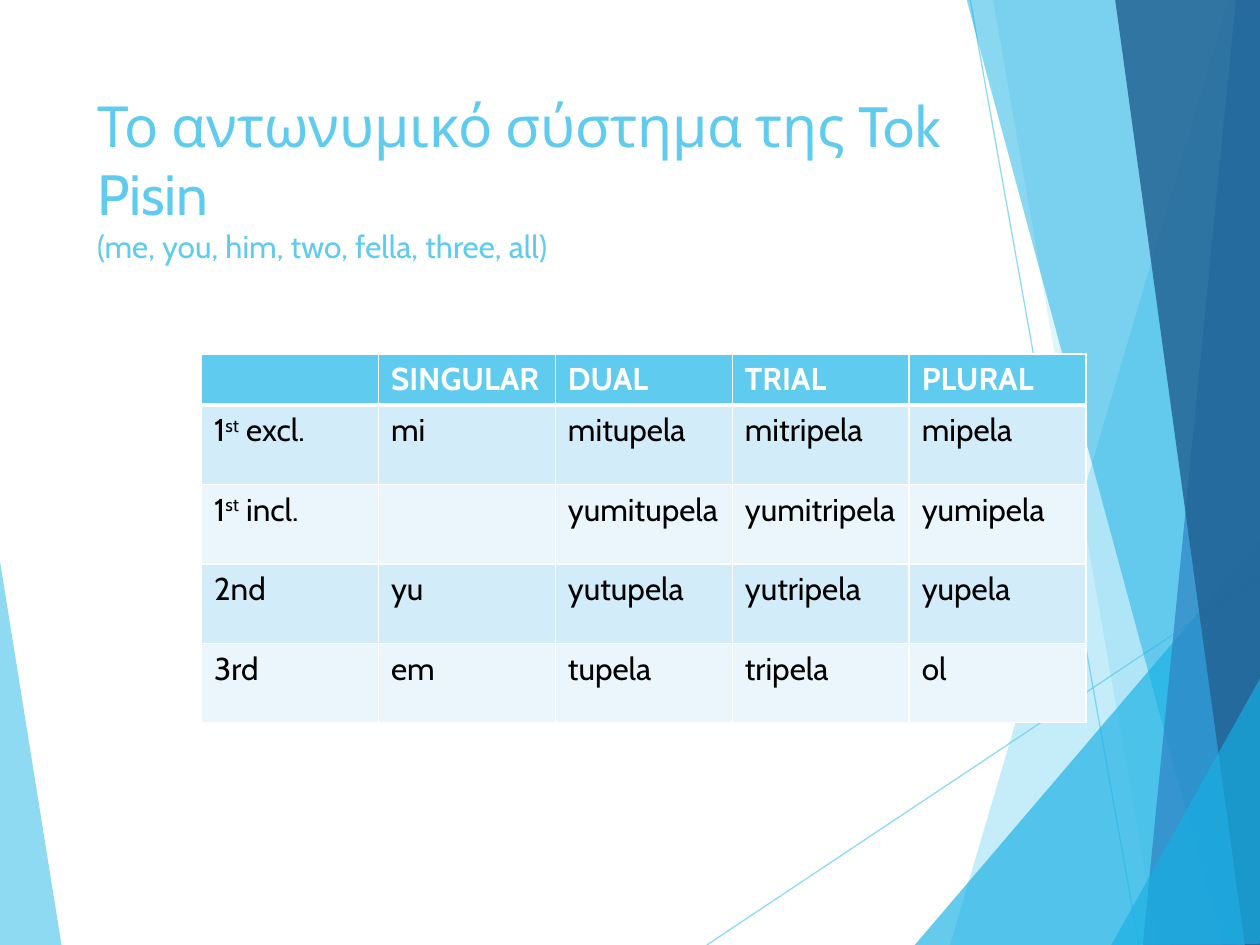
"""Build the slide on the Tok Pisin pronoun system."""
import pptx
import pptx.enum.text
import pptx.oxml
import pptx.oxml.ns
import pptx.util

HEADING = [("Το αντωνυμικό σύστημα της Tok Pisin", 32.4),
           ("(me, you, him, two, fella, three, all)", 18)]
PRONOUNS = [
    ["", "SINGULAR", "DUAL", "TRIAL", "PLURAL"],
    ["1^st^ excl.", "mi", "mitupela", "mitripela", "mipela"],
    ["1^st^ incl.", "", "yumitupela", "yumitripela", "yumipela"],
    ["2nd", "yu", "yutupela", "yutripela", "yupela"],
    ["3rd", "em", "tupela", "tripela", "ol"],
]
SKY, AZURE, BLUE, NAVY, WHITE, BLACK = "5FCBEF", "17B0E4", "2E83C3", "226292", "FFFFFF", "000000"
BANDS = ["EAF6FC", "D2ECF9"]
FONT = "Cabin"
UNITS = 100
WIDTH, HEIGHT = 10, 7.5

LEFT_WEDGE = (SKY, 70, [(-0.01, 4.39), (0.49, 7.51), (-0.01, 7.5)])
RAYS = [((5.61, 7.5), (10.01, 4.57)), ((7.7, 0), (9.04, 7.5))]
RIGHT_FACETS = [
    (SKY, 36, [(9.75, 0), (7.54, 7.5), (10.02, 7.51), (10.01, 0.01)]),
    (SKY, 20, [(7.88, -0.01), (9.19, 7.5), (10.01, 7.5), (10.01, -0.01)]),
    (AZURE, 66, [(7.26, 7.5), (10, 4.29), (10.01, 7.5)]),
    (AZURE, 50, [(7.67, -0.01), (9.7, 7.5), (10.01, 7.49), (10.01, -0.01)]),
    (BLUE, 70, [(9.81, -0.01), (9.07, 7.5), (10.01, 7.5), (10, -0.01)]),
    (NAVY, 82, [(8.85, -0.01), (9.88, 7.5), (10.02, 7.5), (10, -0.01)]),
    (AZURE, 66, [(8.82, 7.5), (10.02, 5.35), (10.02, 7.49)]),
]
TITLE_PLACE = dict(left=0.67, top=0.67, width=0.694 * WIDTH, height=0.192 * HEIGHT)
TABLE_LEFT, TABLE_TOP, COLUMN, HEADER_ROW, BODY_ROW = 1.6, 2.81, 1.404, 0.15, 0.63


def inches(value):
    """Convert inches to slide units."""
    return pptx.util.Inches(value)


def add_child(parent, tag, **attributes):
    """Append an XML child and return it."""
    child = parent.makeelement(pptx.oxml.ns.qn(tag), attributes)
    parent.append(child)
    return child


def paint(colour_format, colour, opacity=100):
    """Set a hex colour and its opacity in percent."""
    colour_format.rgb = pptx.dml.color.RGBColor.from_string(colour)
    if opacity < 100:
        node = colour_format._xFill.find(pptx.oxml.ns.qn("a:srgbClr"))
        add_child(node, "a:alpha", val=str(opacity * 1000))


def add_facet(shapes, colour, opacity, corners):
    """Draw one translucent polygon."""
    grid = [(round(x * UNITS), round(y * UNITS)) for x, y in corners]
    builder = shapes.build_freeform(*grid[0], scale=inches(1) / UNITS)
    builder.add_line_segments(grid[1:], close=True)
    facet = builder.convert_to_shape()
    facet.shadow.inherit = False
    facet.fill.solid()
    paint(facet.fill.fore_color, colour, opacity)
    facet.line.fill.background()


def add_ray(shapes, start, end):
    """Draw one thin translucent line."""
    ray = shapes.add_connector(pptx.enum.shapes.MSO_CONNECTOR.STRAIGHT,
                               *map(inches, start + end))
    ray.line.width = pptx.util.Pt(0.75)
    ray.line.fill.solid()
    paint(ray.line.fill.fore_color, SKY, 70)
    add_child(ray._element.spPr, "a:effectLst")


def add_text(paragraph, text, colour, **formats):
    """Add a run with the given font formats."""
    run = paragraph.add_run()
    run.text = text
    for attribute, value in {"name": FONT, **formats}.items():
        setattr(run.font, attribute, value)
    paint(run.font.color, colour)
    return run


def fill_title(title):
    """Place the title and write its two sizes of text."""
    for side, value in TITLE_PLACE.items():
        setattr(title, side, inches(value))
    frame = title.text_frame
    formats = dict(word_wrap=True, auto_size=pptx.enum.text.MSO_AUTO_SIZE.NONE,
                   vertical_anchor=pptx.enum.text.MSO_ANCHOR.TOP)
    for attribute, value in formats.items():
        setattr(frame, attribute, value)
    paragraph = frame.paragraphs[0]
    paragraph.alignment = pptx.enum.text.PP_ALIGN.LEFT
    for index, (text, size) in enumerate(HEADING):
        if index:
            paragraph.add_line_break()
        add_text(paragraph, text, SKY, size=pptx.util.Pt(size))


def fill_cell(cell, text, row):
    """Write, border and fill one cell; text between carets is raised."""
    header = row == 0
    for index, part in enumerate(text.split("^") if text else []):
        run = add_text(cell.text_frame.paragraphs[0], part, WHITE if header else BLACK,
                       size=pptx.util.Pt(18), bold=header)
        if index % 2:
            run.font._element.set("baseline", "30000")
    thick_side = {0: "B", 1: "T"}.get(row)
    properties = cell._tc.get_or_add_tcPr()
    for side in "LRTB":
        width = pptx.util.Pt(3 if side == thick_side else 1)
        border = add_child(properties, "a:ln" + side, w=str(width))
        add_child(add_child(border, "a:solidFill"), "a:srgbClr", val=WHITE)
    cell.fill.solid()
    paint(cell.fill.fore_color, SKY if header else BANDS[row % 2])


def add_pronouns(shapes):
    """Add the pronoun table."""
    rows, columns = len(PRONOUNS), len(PRONOUNS[0])
    heights = [HEADER_ROW] + [BODY_ROW] * (rows - 1)
    table = shapes.add_table(rows, columns, *map(inches, (
        TABLE_LEFT, TABLE_TOP, COLUMN * columns, sum(heights)))).table
    for column in table.columns:
        column.width = inches(COLUMN)
    for row, (words, height) in enumerate(zip(PRONOUNS, heights)):
        table.rows[row].height = inches(height)
        for column, word in enumerate(words):
            fill_cell(table.cell(row, column), word, row)


def main():
    """Assemble and save the slide."""
    deck = pptx.Presentation()
    deck.slide_width, deck.slide_height = inches(WIDTH), inches(HEIGHT)
    slide = deck.slides.add_slide(deck.slide_layouts.get_by_name("Title Only"))
    shapes = slide.shapes
    add_facet(shapes, *LEFT_WEDGE)
    for ray in RAYS:
        add_ray(shapes, *ray)
    for facet in RIGHT_FACETS:
        add_facet(shapes, *facet)
    fill_title(shapes.title)
    shapes._spTree.append(shapes.title._element)
    add_pronouns(shapes)
    deck.save("out.pptx")


if __name__ == "__main__":
    main()
